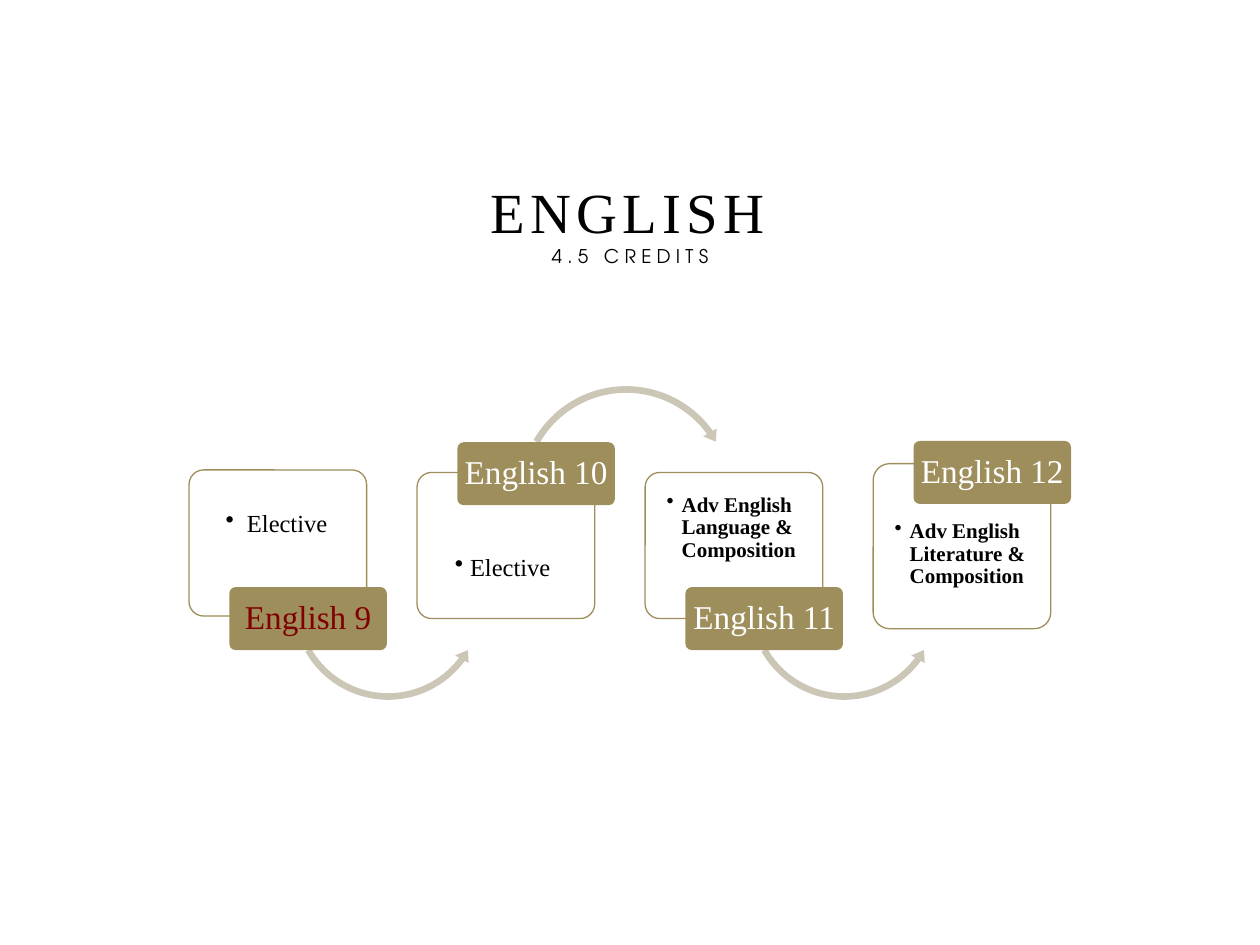
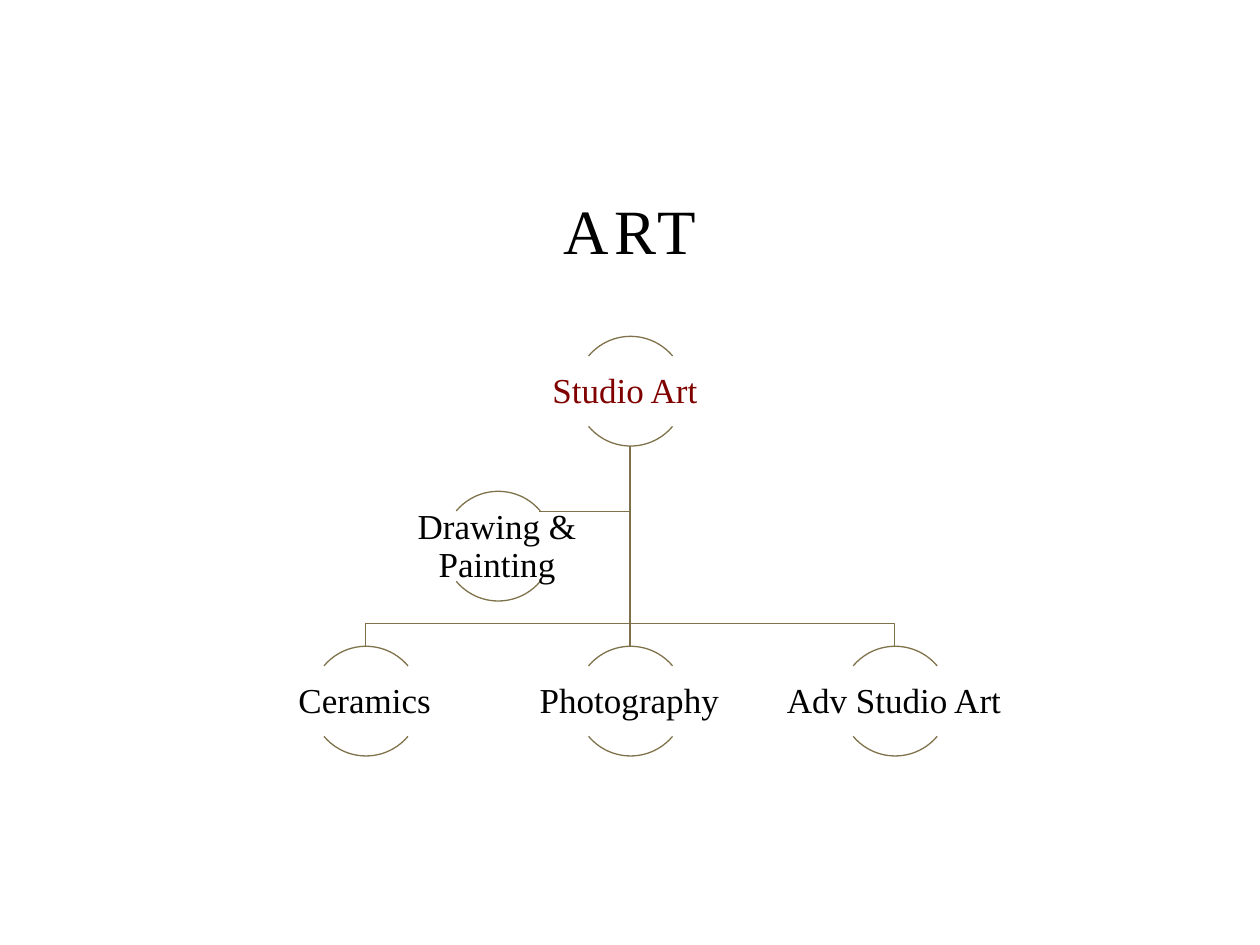
from lxml import etree
from pptx import Presentation
from pptx.dml.color import RGBColor
from pptx.enum.shapes import MSO_CONNECTOR, MSO_SHAPE
from pptx.enum.text import MSO_ANCHOR, MSO_AUTO_SIZE, PP_ALIGN
from pptx.oxml.ns import qn
from pptx.util import Pt

ROUNDED = MSO_SHAPE.ROUNDED_RECTANGLE
ARC = MSO_SHAPE.ARC
ARROW_OVER = MSO_SHAPE.CIRCULAR_ARROW
ARROW_UNDER = MSO_SHAPE.LEFT_CIRCULAR_ARROW
STRAIGHT = MSO_CONNECTOR.STRAIGHT
LEFT, CENTER = PP_ALIGN.LEFT, PP_ALIGN.CENTER
TOP, MIDDLE, BOTTOM = MSO_ANCHOR.TOP, MSO_ANCHOR.MIDDLE, MSO_ANCHOR.BOTTOM

PX = 9144
SERIF, SANS = "Times New Roman", "TeX Gyre Adventor"
BLACK, WHITE, MAROON = "000000", "FFFFFF", "800000"
GOLD, SAND, BRONZE = "9E8E5C", "CCC6B6", "7F724A"


def place(slide, kind, box, adjustments, fill=None, line=None):
    shape = slide.shapes.add_shape(kind, *[length * PX for length in box])
    shape.shadow.inherit = False
    for index, value in enumerate(adjustments):
        shape.adjustments[index] = value
    if fill:
        shape.fill.solid()
        shape.fill.fore_color.rgb = RGBColor.from_string(fill)
    else:
        shape.fill.background()
    if line:
        shape.line.color.rgb = RGBColor.from_string(line)
        shape.line.width = Pt(0.75)
    else:
        shape.line.fill.background()
    return shape


def write(frame, text, size, color, align=CENTER, anchor=MIDDLE, inset=1, bold=False):
    frame.word_wrap = True
    frame.vertical_anchor = anchor
    frame.margin_left = frame.margin_right = inset * PX
    frame.margin_top = frame.margin_bottom = inset * PX
    paragraph = frame.paragraphs[0]
    paragraph.alignment = align
    paragraph.line_spacing = 0.9
    run = paragraph.add_run()
    run.text = text
    run.font.name = SERIF
    run.font.size = Pt(size)
    run.font.bold = bold
    run.font.color.rgb = RGBColor.from_string(color)
    return paragraph


prs = Presentation()
prs.slide_width, prs.slide_height = 1000 * PX, 750 * PX

titles = [
    [("ENGLISH", 32.4, SERIF), ("4.5 CREDITS", 10.8, SANS)],
    [("ART", 36, SERIF)],
]
slides = []
for title_lines in titles:
    slide = prs.slides.add_slide(prs.slide_layouts[5])
    slides.append(slide)
    title = slide.shapes.title
    title.left, title.top, title.width, title.height = 150 * PX, 142 * PX, 700 * PX, 75 * PX
    title.text_frame.auto_size = MSO_AUTO_SIZE.NONE
    title.text_frame.vertical_anchor = BOTTOM
    heading = title.text_frame.paragraphs[0]
    heading.alignment = CENTER
    for number, (text, size, font) in enumerate(title_lines):
        if number:
            line_break = heading._p.add_br()
            etree.SubElement(line_break, qn("a:rPr"), sz="1080")
        run = heading.add_run()
        run.text = text
        run.font.size = Pt(size)
        run.font.name = font
        run.font.color.rgb = RGBColor.from_string(BLACK)
        run._r.get_or_add_rPr().set("spc", "300")
english, art = slides

UNDER = (ARROW_UNDER, 79, 401, 158, (0.033, 4.091, 21.85, 90.25, 0.039))
OVER = (ARROW_OVER, 78, 303, 176, (0.03, 3.643, 194.6, 125.76, 0.035))
courses = [
    ("English 9", MAROON, 466, 373, 116, "Elective", 395, 14, 29, 17, UNDER),
    ("English 10", WHITE, 351, 375, 116, "Elective", 430, 14, 25, 12, OVER),
    ("English 11", WHITE, 466, 375, 116, "Adv English Language & Composition", 378, 12, 12, 12, UNDER),
    ("English 12", WHITE, 350, 368, 131, "Adv English Literature & Composition", 399, 12, 12, 12, None),
]
for index, course in enumerate(courses):
    name, name_color, tag_top, top, height, option, option_top, size, margin, hang, arrow = course
    left = 150 + 181 * index
    card = place(english, ROUNDED, (left, top, 141, height), [0.1], WHITE, GOLD)
    card_color = card.fill._xPr.find(qn("a:solidFill"))[0]
    etree.SubElement(card_color, qn("a:alpha"), val="90000")

    option_box = english.shapes.add_textbox(
        (left + 3) * PX, option_top * PX, 135 * PX, (top + height - option_top) * PX)
    item = write(option_box.text_frame, option, size, BLACK, LEFT, TOP, 14, size == 12)
    properties = item._p.get_or_add_pPr()
    properties.set("marL", str(margin * PX))
    properties.set("indent", str(-hang * PX))
    etree.SubElement(properties, qn("a:buChar"), char="•")

    if arrow:
        kind, offset, arrow_top, side, bend = arrow
        place(english, kind, (left + offset, arrow_top, side, side), bend, SAND)
    tag = place(english, ROUNDED, (left + 32, tag_top, 125, 50), [0.1], GOLD)
    write(tag.text_frame, name, 19, name_color)
    tag.text_frame.word_wrap = False

ROOT_X, ROOT_BOTTOM, BUS_Y, LEAF_TOP = 500, 354, 495, 513
SPREAD, RING = 210, 87
elbows = [[(ROOT_X, 406), (428, 406)]]
for leaf_x in (ROOT_X + SPREAD, ROOT_X - SPREAD):
    elbows.append([(ROOT_X, BUS_Y), (leaf_x, BUS_Y), (leaf_x, LEAF_TOP)])
for points in elbows:
    builder = art.shapes.build_freeform(ROOT_X, ROOT_BOTTOM, scale=PX)
    builder.add_line_segments(points, close=False)
    branch = builder.convert_to_shape()
    branch.shadow.inherit = False
    branch.fill.background()
    branch.line.color.rgb = RGBColor.from_string(BRONZE)
    branch.line.width = Pt(0.75)

trunk = art.shapes.add_connector(
    STRAIGHT, ROOT_X * PX, ROOT_BOTTOM * PX, ROOT_X * PX, LEAF_TOP * PX)
trunk.line.color.rgb = RGBColor.from_string(BRONZE)
trunk.line.width = Pt(0.75)
etree.SubElement(trunk._element.spPr, qn("a:effectLst"))

classes = [
    ("Studio Art ", ROOT_X, 267, MAROON),
    ("Ceramics", ROOT_X - SPREAD, LEAF_TOP, BLACK),
    ("Photography", ROOT_X, LEAF_TOP, BLACK),
    ("Adv Studio Art", ROOT_X + SPREAD, LEAF_TOP, BLACK),
    ("Drawing & Painting", ROOT_X - SPREAD // 2, 390, BLACK),
]
for name, center, top, color in classes:
    for sweep in ((132, 192), (24, 84)):
        place(art, ARC, (center - RING // 2, top, RING, RING), sweep, line=BRONZE)
    label = art.shapes.add_textbox((center - 87) * PX, (top + 16) * PX, 173 * PX, 56 * PX)
    write(label.text_frame, name, 20, color)

prs.save("out.pptx")
